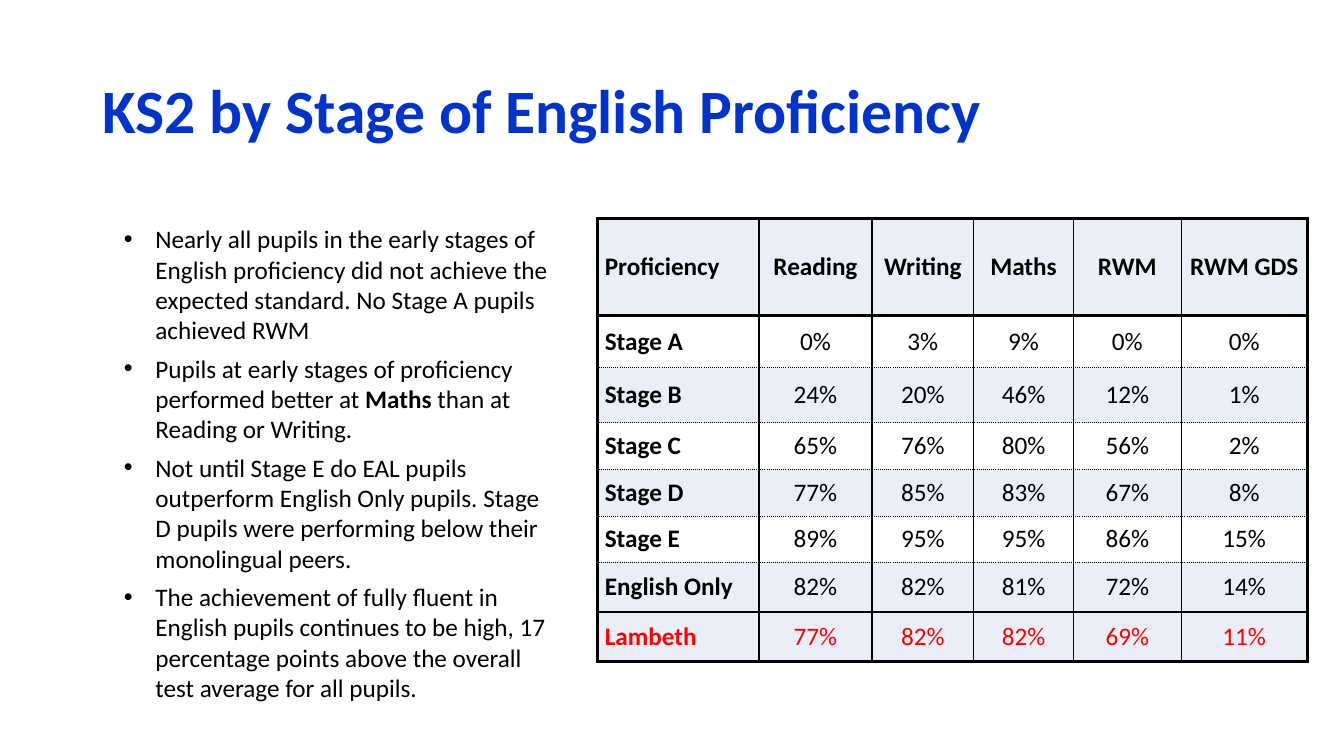
"""Build the slide on KS2 results by stage of English proficiency."""
from lxml import etree
from pptx import Presentation
from pptx.dml.color import RGBColor
from pptx.enum.text import MSO_ANCHOR, PP_ALIGN
from pptx.oxml.ns import qn
from pptx.util import Pt

MIDDLE = MSO_ANCHOR.MIDDLE
LEFT, CENTER = PP_ALIGN.LEFT, PP_ALIGN.CENTER
BLUE = RGBColor(0x00, 0x33, 0xCC)
BLACK = RGBColor(0x00, 0x00, 0x00)
RED = RGBColor(0xFF, 0x00, 0x00)
WHITE = RGBColor(0xFF, 0xFF, 0xFF)
PALE = RGBColor(0xEA, 0xEF, 0xF7)
THIN, THICK = Pt(1), Pt(2.25)


def style(run, size, color, bold):
    run.font.name = "Calibri"
    run.font.size = Pt(size)
    run.font.color.rgb = color
    run.font.bold = bold


def border(cell, side, width, dash):
    line = etree.SubElement(cell._tc.get_or_add_tcPr(), qn("a:ln" + side), w=str(width))
    fill = etree.SubElement(line, qn("a:solidFill"))
    etree.SubElement(fill, qn("a:srgbClr"), val=str(BLACK))
    etree.SubElement(line, qn("a:prstDash"), val=dash)


deck = Presentation()
deck.slide_width, deck.slide_height = Pt(960), Pt(540)
slide = deck.slides.add_slide(deck.slide_layouts[6])

title = slide.shapes.add_textbox(Pt(66), Pt(28.8), Pt(828), Pt(104.4)).text_frame
title.word_wrap = True
title.vertical_anchor = MIDDLE
title.text = "KS2 by Stage of English Proficiency"
title.paragraphs[0].line_spacing = 0.9
style(title.paragraphs[0].runs[0], 44, BLUE, True)

rows = [
    ("Proficiency", "Reading", "Writing", "Maths", "RWM", "RWM GDS"),
    ("Stage A", "0%", "3%", "9%", "0%", "0%"),
    ("Stage B", "24%", "20%", "46%", "12%", "1%"),
    ("Stage C", "65%", "76%", "80%", "56%", "2%"),
    ("Stage D", "77%", "85%", "83%", "67%", "8%"),
    ("Stage E", "89%", "95%", "95%", "86%", "15%"),
    ("English Only", "82%", "82%", "81%", "72%", "14%"),
    ("Lambeth", "77%", "82%", "82%", "69%", "11%"),
]
widths = [115.2, 80.6, 72.7, 71.3, 77, 90]
heights = [69.1, 37.4, 39.2, 33.8, 33.1, 33.1, 35.3, 35.3]
last_row, last_col = len(rows) - 1, len(widths) - 1
heavy = {0, 1, last_row, last_row + 1}

table = slide.shapes.add_table(
    len(rows), len(widths), Pt(427), Pt(156.2), Pt(sum(widths)), Pt(sum(heights))
).table
table.horz_banding = False
for col, width in zip(table.columns, widths):
    col.width = Pt(width)
for row, height in zip(table.rows, heights):
    row.height = Pt(height)

for r, row in enumerate(rows):
    for c, text in enumerate(row):
        cell = table.cell(r, c)
        border(cell, "L", THICK if c == 0 else THIN, "solid")
        border(cell, "R", THICK if c == last_col else THIN, "solid")
        for side, edge in (("T", r), ("B", r + 1)):
            if edge in heavy:
                border(cell, side, THICK, "solid")
            else:
                border(cell, side, THIN, "sysDot")
        cell.fill.solid()
        cell.fill.fore_color.rgb = WHITE if r in (1, 3, 5) else PALE
        cell.vertical_anchor = MIDDLE
        cell.margin_left = cell.margin_right = Pt(5)
        cell.margin_top = cell.margin_bottom = 0
        cell.text = text
        para = cell.text_frame.paragraphs[0]
        para.alignment = LEFT if c == 0 else CENTER
        color = RED if r == last_row else BLACK
        style(para.runs[0], 18, color, r == 0 or c == 0)

points = [
    ["Nearly all pupils in the early stages of English proficiency did not achieve "
     "the expected standard. No Stage A pupils achieved RWM"],
    ["Pupils at early stages of proficiency performed better at ", "Maths ",
     "than at Reading or Writing."],
    ["Not until Stage E do EAL pupils outperform English Only pupils. Stage D pupils "
     "were performing below their monolingual peers."],
    ["The achievement of fully fluent in English pupils continues to be high, "
     "17 percentage points above the overall test average for all pupils."],
]
notes = slide.shapes.add_textbox(Pt(81.4), Pt(156.2), Pt(323.3), Pt(352.8)).text_frame
notes.word_wrap = True
for i, parts in enumerate(points):
    para = notes.paragraphs[0] if i == 0 else notes.add_paragraph()
    para.space_after = Pt(6)
    props = para._p.get_or_add_pPr()
    props.set("marL", str(Pt(22.5)))
    props.set("indent", str(-Pt(22.5)))
    etree.SubElement(props, qn("a:buFont"), typeface="Arial")
    etree.SubElement(props, qn("a:buChar"), char="•")
    for part in parts:
        run = para.add_run()
        run.text = part
        style(run, 18, BLACK, part == "Maths ")

deck.save("out.pptx")
